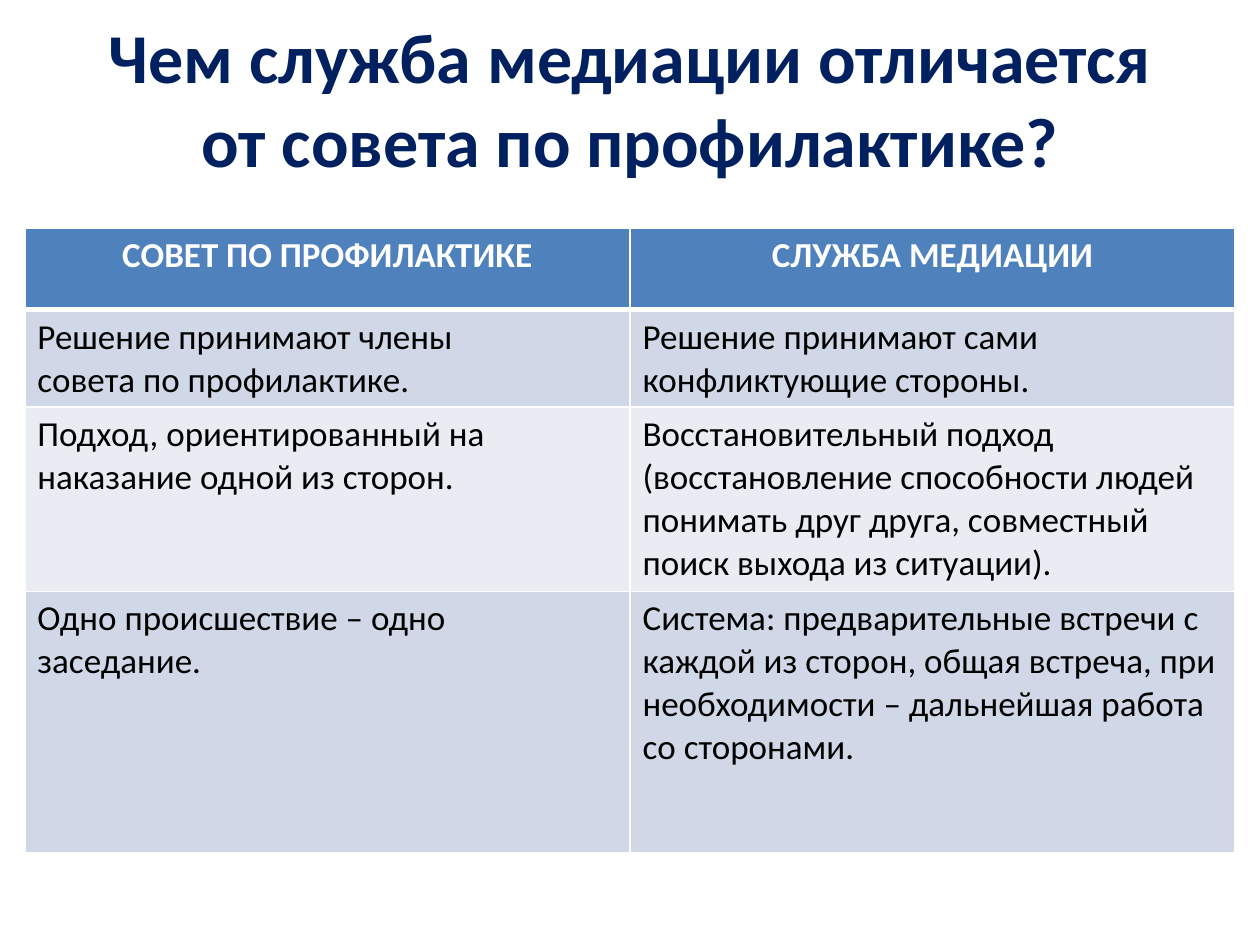
from lxml.etree import SubElement
from pptx import Presentation
from pptx.dml.color import RGBColor
from pptx.enum.text import MSO_ANCHOR as Anchor, PP_ALIGN as Align
from pptx.oxml.ns import qn
from pptx.util import Cm, Pt

NAVY = RGBColor(0x00, 0x20, 0x60)
BLUE = RGBColor(0x4F, 0x81, 0xBD)
BLUE_BAND = RGBColor(0xD0, 0xD8, 0xE7)
PALE_BAND = RGBColor(0xE9, 0xEC, 0xF3)
WHITE = RGBColor(0xFF, 0xFF, 0xFF)
BLACK = RGBColor(0x00, 0x00, 0x00)

FONT = "Calibri"
THIN, THICK = 0.96, 3
TITLE = "Чем служба медиации отличается от совета по профилактике?"
ROW_HEIGHTS = [1.64, 1.96, 3.72, 5.28]
COMPARISON = [
    (["СОВЕТ ПО ПРОФИЛАКТИКЕ"], ["СЛУЖБА МЕДИАЦИИ"]),
    (["Решение принимают члены", "совета по профилактике."],
     ["Решение принимают сами конфликтующие стороны."]),
    (["Подход, ориентированный на наказание одной из сторон."],
     ["Восстановительный подход (восстановление способности людей "
      "понимать друг друга, совместный поиск выхода из ситуации)."]),
    (["Одно происшествие – одно заседание."],
     ["Система: предварительные встречи с каждой из сторон, общая встреча, "
      "при необходимости – дальнейшая работа со сторонами."]),
]


def write_lines(frame, lines, size, color, bold, align):
    """Write each line as a paragraph with one formatted run."""
    for index, line in enumerate(lines):
        paragraph = frame.add_paragraph() if index else frame.paragraphs[0]
        paragraph.alignment = align
        run = paragraph.add_run()
        run.text = line
        run.font.name = FONT
        run.font.size = Pt(size)
        run.font.bold = bold
        run.font.color.rgb = color


def add_title(slide, left, top, width, height):
    """Place the centred question in the given box."""
    title = slide.shapes.add_textbox(Cm(left), Cm(top), Cm(width), Cm(height))
    frame = title.text_frame
    frame.word_wrap = True
    frame.vertical_anchor = Anchor.MIDDLE
    write_lines(frame, [TITLE], 40, NAVY, True, Align.CENTER)


def set_borders(cell, top, bottom):
    """Draw white cell borders with the given top and bottom weights."""
    properties = cell._tc.get_or_add_tcPr()
    for side, weight in zip("LRTB", (THIN, THIN, top, bottom)):
        line = SubElement(properties, qn(f"a:ln{side}"), w=str(Pt(weight)))
        fill = SubElement(line, qn("a:solidFill"))
        SubElement(fill, qn("a:srgbClr"), val=str(WHITE))


def add_comparison(slide, left, top, width):
    """Place the two-column comparison table in the given box."""
    table = slide.shapes.add_table(
        len(COMPARISON), 2, Cm(left), Cm(top), Cm(width), Cm(sum(ROW_HEIGHTS))
    ).table
    for column in table.columns:
        column.width = Cm(width / 2)
    for row, height in zip(table.rows, ROW_HEIGHTS):
        row.height = Cm(height)
    for index, texts in enumerate(COMPARISON):
        header = index == 0
        band = BLUE if header else BLUE_BAND if index % 2 else PALE_BAND
        for side, lines in enumerate(texts):
            cell = table.cell(index, side)
            set_borders(cell, THICK if index == 1 else THIN,
                        THICK if header else THIN)
            cell.fill.solid()
            cell.fill.fore_color.rgb = band
            write_lines(cell.text_frame, lines, 20,
                        WHITE if header else BLACK, header,
                        Align.CENTER if header else Align.LEFT)


def main():
    """Build and save the slide."""
    deck = Presentation()
    deck.slide_width, deck.slide_height = Cm(25.4), Cm(19.05)
    slide = deck.slides.add_slide(deck.slide_layouts[6])
    add_title(slide, 1.27, 0, 22.86, 3.94)
    add_comparison(slide, 0.5, 4.6, 24.4)
    deck.save("out.pptx")


if __name__ == "__main__":
    main()
